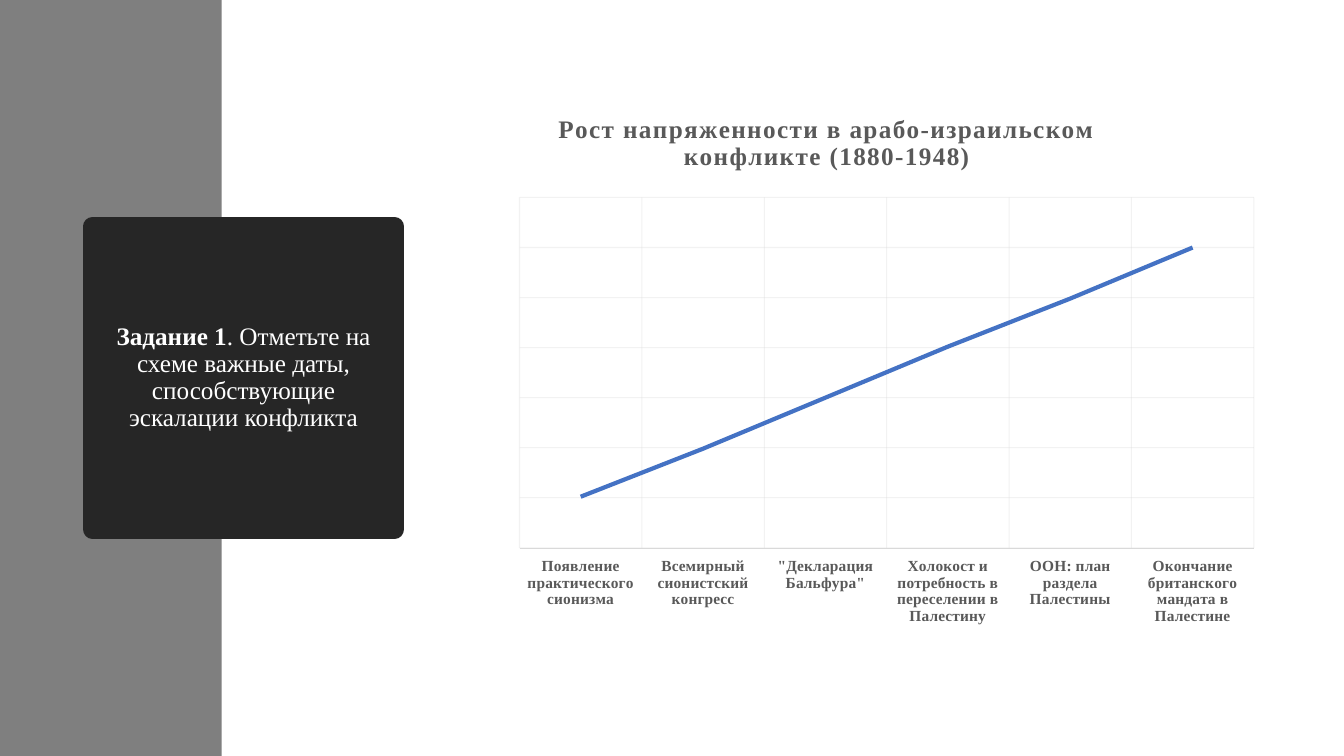
from dataclasses import dataclass

from lxml.etree import SubElement
from pptx import Presentation
from pptx.chart.data import CategoryChartData
from pptx.dml.color import RGBColor
from pptx.enum.chart import XL_CHART_TYPE as ChartType, XL_TICK_LABEL_POSITION as LabelPosition
from pptx.enum.chart import XL_TICK_MARK as TickMark
from pptx.enum.shapes import MSO_SHAPE as Preset
from pptx.enum.text import MSO_ANCHOR as Anchor, PP_ALIGN as Align
from pptx.oxml.ns import qn
from pptx.util import Emu, Pt

EMU_PER_PX = 9525


@dataclass(frozen=True)
class Theme:
    font: str = "Times New Roman"
    band: str = "7F7F7F"
    card: str = "262626"
    card_text: str = "FFFFFF"
    chart_text: str = "595959"
    grid: str = "D9D9D9"
    series: str = "4472C4"
    heading_size: int = 18
    label_size: int = 11
    base_size: int = 10
    card_border: float = 13.75


@dataclass(frozen=True)
class Frame:
    left: int
    top: int
    width: int
    height: int

    def emu(self) -> list[Emu]:
        return [px(n) for n in (self.left, self.top, self.width, self.height)]


@dataclass(frozen=True)
class Panel:
    frame: Frame
    color: str
    border: float = 0


THEME = Theme()
BAND = Panel(Frame(0, 0, 211, 720), THEME.band)
CARD = Panel(Frame(88, 216, 288, 288), THEME.card, THEME.card_border)
CHART_FRAME = Frame(413, 51, 818, 653)

CHART_TITLE = "Рост напряженности в арабо-израильском конфликте (1880-1948)"
TENSION = {
    "Появление практического сионизма": 17,
    "Всемирный сионистский конгресс": 33,
    '"Декларация Бальфура"': 50,
    "Холокост и потребность в переселении в Палестину": 67,
    "ООН: план раздела Палестины": 83,
    "Окончание британского мандата в Палестине": 100,
}
GRID_STEP = 16.67
GRID_ROWS = 7


def px(count: int) -> Emu:
    return Emu(count * EMU_PER_PX)


def style_font(font, *, size: float, color: str, bold: bool = False) -> None:
    font.name = THEME.font
    font.size = Pt(size)
    font.bold = bold
    font.color.rgb = RGBColor.from_string(color)


def style_line(line, *, color: str, width: float, opacity: int = 100) -> None:
    line.width = Pt(width)
    line.fill.solid()
    line.fill.fore_color.rgb = RGBColor.from_string(color)
    if opacity < 100:
        tint = line._get_or_add_ln().find(".//" + qn("a:srgbClr"))
        SubElement(tint, qn("a:alpha"), val=str(opacity * 1000))


def add_span(para, text: str, *, bold: bool = False) -> None:
    span = para.add_run()
    span.text = text
    style_font(span.font, size=THEME.heading_size, color=THEME.card_text, bold=bold)


def add_panel(page, panel: Panel):
    box = page.shapes.add_shape(Preset.RECTANGLE, *panel.frame.emu())
    box.shadow.inherit = False
    box.fill.solid()
    box.fill.fore_color.rgb = RGBColor.from_string(panel.color)
    if panel.border:
        style_line(box.line, color=panel.color, width=panel.border)
        SubElement(box.line._get_or_add_ln(), qn("a:round"))
    else:
        box.line.fill.background()
    return box


def place(layout, **settings: object) -> None:
    """Fill a chart layout element with a manual position."""
    manual = SubElement(layout, qn("c:manualLayout"))
    for name, value in settings.items():
        SubElement(manual, qn(f"c:{name}"), val=str(value))


def add_layout(parent, index: int):
    layout = parent.find(qn("c:layout"))
    if layout is None:
        layout = SubElement(parent, qn("c:layout"))
        parent.insert(index, layout)
    return layout


def add_task(page) -> None:
    box = add_panel(page, CARD)
    frame = box.text_frame
    frame.word_wrap = True
    frame.vertical_anchor = Anchor.MIDDLE
    para = frame.paragraphs[0]
    para.alignment = Align.CENTER
    para.line_spacing = 0.9
    add_span(para, "Задание 1", bold=True)
    add_span(para, ". Отметьте на схеме важные даты, способствующие эскалации конфликта")


def add_tension_chart(page) -> None:
    data = CategoryChartData()
    data.categories = list(TENSION)
    data.add_series("Series 1", list(TENSION.values()))
    chart = page.shapes.add_chart(ChartType.LINE, *CHART_FRAME.emu(), data).chart
    chart.has_legend = False
    chart.font.name = "Calibri"
    chart.font.size = Pt(THEME.base_size)

    # Title
    title = chart.chart_title
    para = title.text_frame.paragraphs[0]
    para.alignment = Align.CENTER
    span = para.add_run()
    span.text = CHART_TITLE
    style_font(span.font, size=THEME.heading_size, color=THEME.chart_text, bold=True)
    span.font._element.set("spc", "100")
    title.include_in_layout = False
    place(add_layout(title._element, 1), xMode="edge", yMode="edge", x=0.14, y=0.08)

    # Plot area
    plot_area = chart._chartSpace.chart.plotArea
    place(add_layout(plot_area, 0), layoutTarget="inner", xMode="edge", yMode="edge",
          x=0.1, y=0.21, w=0.855, h=0.511)

    # Axes
    events, level = chart.category_axis, chart.value_axis
    for axis in (events, level):
        axis.has_major_gridlines = True
        style_line(axis.major_gridlines.format.line, color=THEME.grid, width=0.75, opacity=32)
        axis.major_tick_mark = TickMark.NONE
    events.tick_label_position = LabelPosition.LOW
    style_font(events.tick_labels.font, size=THEME.label_size, color=THEME.chart_text, bold=True)
    style_line(events.format.line, color=THEME.grid, width=0.25)
    level.minimum_scale = 0
    level.maximum_scale = round(GRID_STEP * GRID_ROWS, 2)
    level.major_unit = GRID_STEP
    level.visible = False

    # Series
    plot = chart.plots[0]
    plot.vary_by_categories = False
    series = plot.series[0]
    series.smooth = False
    style_line(series.format.line, color=THEME.series, width=3)


def main() -> None:
    deck = Presentation()
    deck.slide_width, deck.slide_height = px(1280), px(720)
    page = deck.slides.add_slide(deck.slide_layouts[6])
    add_panel(page, BAND)
    add_task(page)
    add_tension_chart(page)
    deck.save("out.pptx")


if __name__ == "__main__":
    main()
